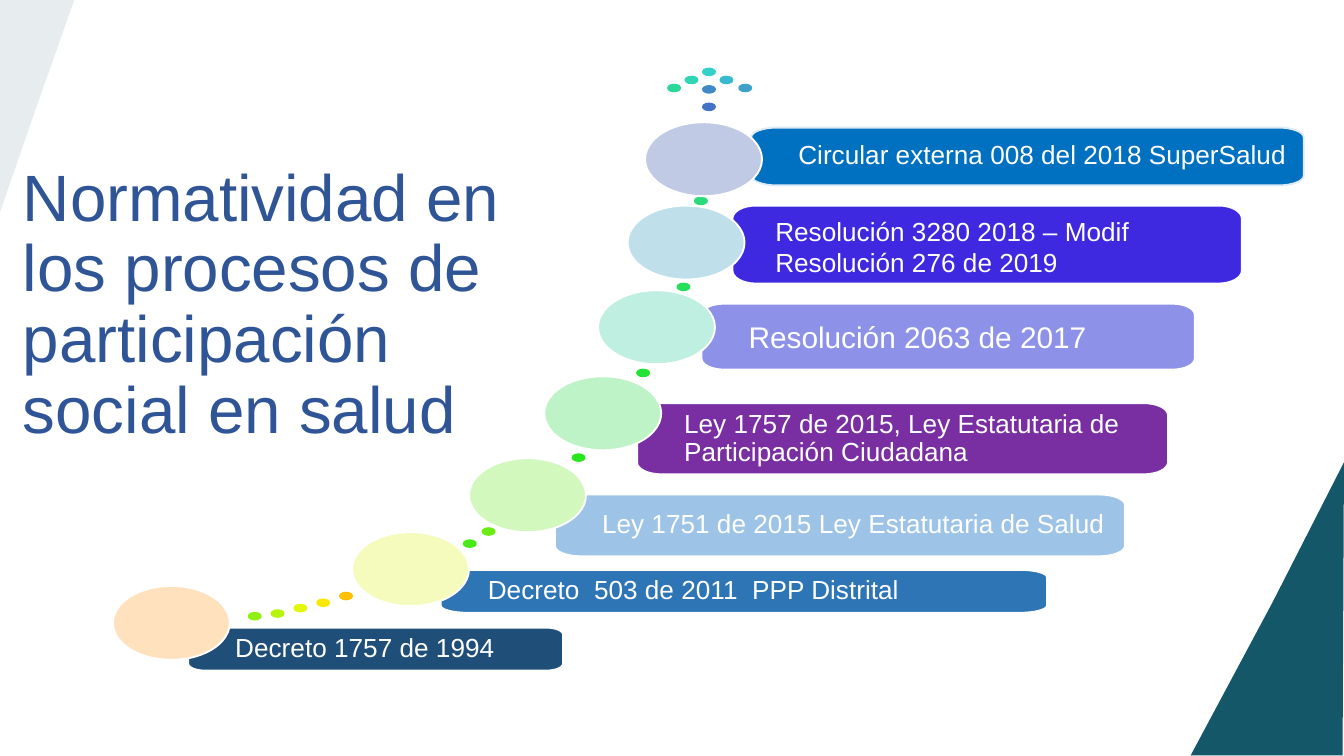
from dataclasses import dataclass
from math import cos, pi, sin

from lxml.etree import SubElement
from pptx import Presentation
from pptx.dml.color import RGBColor
from pptx.enum.shapes import MSO_SHAPE
from pptx.enum.text import MSO_ANCHOR, PP_ALIGN
from pptx.oxml.ns import qn
from pptx.util import Inches, Pt


@dataclass(frozen=True)
class Theme:
    font: str = "Arial"
    title: str = "2F5597"
    white: str = "FFFFFF"
    corner: str = "145768"
    title_size: float = 35.1
    label_size: float = 14
    large_label_size: float = 16


THEME = Theme()
BUBBLE_SIZE = (0.87, 0.55)
DOT_SIZE = (0.09, 0.05)

# bar left, top, width, height, colour, outline; bubble left, top, colour; label
STEPS = [
    (1.4, 4.67, 2.79, 0.32, "1F4E79", "FFFFFF", 0.84, 4.36, "FFE2BD",
     "Decreto 1757 de 1994"),
    (3.28, 4.24, 4.51, 0.32, "2E75B6", "FFFFFF", 2.62, 3.96, "F5FBBC",
     "Decreto  503 de 2011  PPP Distrital"),
    (4.13, 3.68, 4.24, 0.46, "9DC3E6", "FFFFFF", 3.49, 3.41, "D3F8BD",
     "Ley 1751 de 2015 Ley Estatutaria de Salud"),
    (4.74, 3, 3.95, 0.53, "792EA2", "FFFFFF", 4.05, 2.8, "BDF3C6",
     "Ley 1757 de 2015, Ley Estatutaria de Participación Ciudadana"),
    (5.22, 2.26, 3.67, 0.49, "8D91E7", "FFFFFF", 4.45, 2.16, "BEEFE0",
     "Resolución 2063 de 2017"),
    (5.45, 1.53, 3.79, 0.58, "3E28E0", "FFFFFF", 4.67, 1.53, "BFE0EA", ""),
    (5.59, 0.95, 4.11, 0.43, "0070C0", "DEEBF7", 4.8, 0.91, "C1CAE4",
     "Circular externa 008 del 2018 SuperSalud"),
]
LARGE_LABEL = "Resolución 2063 de 2017"

DOTS = [
    (2.53, 4.41, "FFC000"), (2.36, 4.46, "FBE804"), (2.19, 4.5, "E2F808"),
    (2.02, 4.54, "B7F40C"), (1.85, 4.56, "90F110"), (3.59, 3.93, "6BED14"),
    (3.45, 4.02, "48EA18"), (4.26, 3.38, "28E61D"), (4.74, 2.75, "21E336"),
    (5.04, 2.11, "25DF59"), (5.17, 1.47, "29DC79"), (4.97, 0.63, "2CD897"),
    (5.1, 0.57, "30D5B3"), (5.23, 0.51, "34D1CB"), (5.36, 0.57, "38BACE"),
    (5.5, 0.63, "3CA0CB"), (5.23, 0.64, "4088C7"), (5.23, 0.77, "4472C4"),
]


def paint(shape, fill, line=None):
    shape.shadow.inherit = False
    shape.fill.solid()
    shape.fill.fore_color.rgb = RGBColor.from_string(fill)
    if line:
        shape.line.color.rgb = RGBColor.from_string(line)
        shape.line.width = Pt(1)
    else:
        shape.line.fill.background()


def add_outline(page, points):
    corners = [(Inches(x), Inches(y)) for x, y in points]
    builder = page.shapes.build_freeform(*corners[0])
    builder.add_line_segments(corners[1:], close=True)
    return builder.convert_to_shape()


def add_corner(page, points, opacity=100):
    corner = add_outline(page, points)
    paint(corner, THEME.corner)
    if opacity < 100:
        color = corner.fill._xPr.find(qn("a:solidFill"))[0]
        SubElement(color, qn("a:alpha")).set("val", str(opacity * 1000))


def add_ellipse(page, left, top, size, fill, line):
    ellipse = page.shapes.add_shape(
        MSO_SHAPE.OVAL, Inches(left), Inches(top), *map(Inches, size))
    paint(ellipse, fill, line)


def rounded_points(left, top, width, height, steps=8):
    """Outline whose elliptical corners scale with the width and height."""
    radius_x, radius_y = width * 0.046, height / 6
    right, bottom = left + width - radius_x, top + height - radius_y
    centers = [(right, bottom), (left + radius_x, bottom),
               (left + radius_x, top + radius_y), (right, top + radius_y)]
    points = []
    for quarter, (x, y) in enumerate(centers):
        for step in range(steps + 1):
            angle = (quarter + step / steps) * pi / 2
            points.append((x + radius_x * cos(angle), y + radius_y * sin(angle)))
    return points


def write(para, text, size, color=THEME.white, spacing=None):
    para.alignment = PP_ALIGN.LEFT
    if spacing:
        para.line_spacing = spacing
    span = para.add_run()
    span.text = text
    span.font.name = THEME.font
    span.font.size = Pt(size)
    span.font.color.rgb = RGBColor.from_string(color)


def add_bar(page, left, top, width, height, fill, line, label):
    bar = add_outline(page, rounded_points(left, top, width, height))
    paint(bar, fill, line)
    if not label:
        return
    frame = bar.text_frame
    frame.word_wrap = True
    frame.vertical_anchor = MSO_ANCHOR.MIDDLE
    frame.margin_left = Inches(0.35)
    frame.margin_top = frame.margin_right = frame.margin_bottom = Inches(0.09)
    if label == LARGE_LABEL:
        write(frame.paragraphs[0], label, THEME.large_label_size)
    else:
        write(frame.paragraphs[0], label, THEME.label_size, spacing=0.9)


def add_title(page, text):
    title = page.shapes.title
    title.left, title.top = Inches(0.07), Inches(0.96)
    title.width, title.height = Inches(4.23), Inches(2.42)
    title.text_frame.word_wrap = True
    title.text_frame.vertical_anchor = MSO_ANCHOR.BOTTOM
    write(title.text_frame.paragraphs[0], text, THEME.title_size, THEME.title, 0.9)


def add_text(page, left, top, width, height, lines):
    box = page.shapes.add_textbox(*map(Inches, (left, top, width, height)))
    frame = box.text_frame
    frame.word_wrap = True
    for index, line in enumerate(lines):
        para = frame.add_paragraph() if index else frame.paragraphs[0]
        write(para, line, THEME.label_size)


def main():
    deck = Presentation()
    deck.slide_width = Inches(10)
    deck.slide_height = deck.slide_width * 9 // 16
    page = deck.slides.add_slide(deck.slide_layouts[5])

    add_corner(page, [(8.86, 5.62), (9.47, 4.48), (10, 3.44), (9.99, 5.62)])
    add_corner(page, [(-0.01, 1.61), (-0.01, -0.02), (0.56, -0.02), (0.26, 0.83)],
               opacity=10)
    add_title(page, "Normatividad en los procesos de participación social en salud")

    for left, top, color in DOTS:
        add_ellipse(page, left, top, DOT_SIZE, color, color)
    for *bar, bubble_left, bubble_top, bubble_color, label in STEPS:
        add_bar(page, *bar, label)
        add_ellipse(page, bubble_left, bubble_top, BUBBLE_SIZE, bubble_color,
                    THEME.white)
    add_text(page, 5.67, 1.55, 3.22, 0.57,
             ["Resolución 3280 2018 – Modif", "Resolución 276 de 2019"])

    deck.save("out.pptx")


if __name__ == "__main__":
    main()
